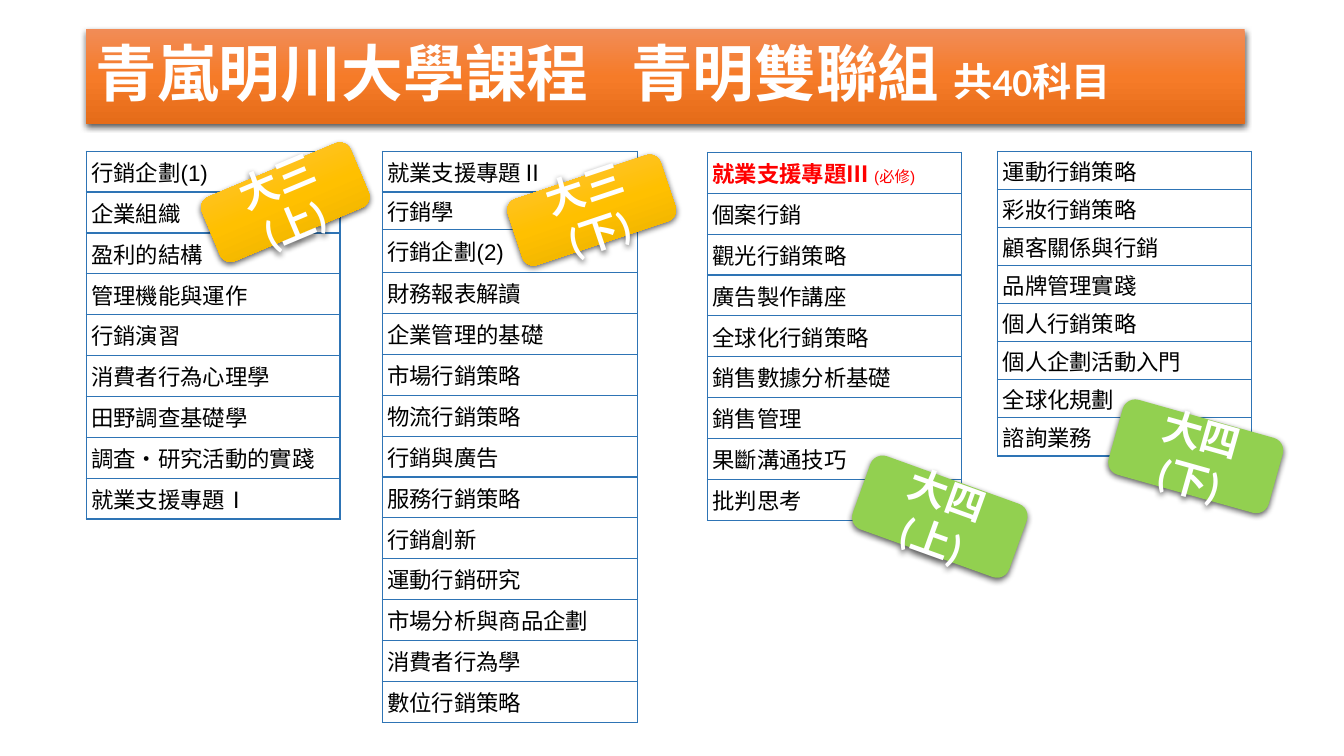
from copy import deepcopy
from dataclasses import dataclass

from lxml import etree
from pptx import Presentation
from pptx.dml import color
from pptx.enum import shapes, text
from pptx.oxml import ns
from pptx import util as u


@dataclass(frozen=True)
class Theme:
    heading_font: str = "Calibri"
    body_font: str = "Arial"
    orange: tuple = ("F18C57", "F67B28", "E56C19")
    gold: tuple = ("FFC64B", "FFC000", "E3AB00")
    green: tuple = ("92D050",)
    border: str = "2E74B5"
    black: str = "000000"
    white: str = "FFFFFF"
    red: str = "FF0000"
    title_size: int = 44
    subtitle_size: int = 28
    badge_size: int = 28
    course_size: int = 16
    note_size: int = 11


THEME = Theme()
ROW_HEIGHT = 1.03
REQUIRED_COURSE = "就業支援專題Ⅲ "
REQUIRED_NOTE = "(必修)"

COURSE_TABLES = [
    (2.17, 3.81, 6.4, [ROW_HEIGHT] * 9, [
        "行銷企劃(1)", "企業組織", "盈利的結構", "管理機能與運作", "行銷演習",
        "消費者行為心理學", "田野調查基礎學", "調査・研究活動的實踐", "就業支援專題Ⅰ"]),
    (9.63, 3.81, 6.43, [ROW_HEIGHT, 0.94, 1.09] + [ROW_HEIGHT] * 11, [
        "就業支援專題Ⅱ", "行銷學", "行銷企劃(2)", "財務報表解讀", "企業管理的基礎",
        "市場行銷策略", "物流行銷策略", "行銷與廣告", "服務行銷策略", "行銷創新",
        "運動行銷研究", "市場分析與商品企劃", "消費者行為學", "數位行銷策略"]),
    (17.83, 3.84, 6.4, [ROW_HEIGHT] * 9, [
        REQUIRED_COURSE, "個案行銷", "觀光行銷策略", "廣告製作講座", "全球化行銷策略",
        "銷售數據分析基礎", "銷售管理", "果斷溝通技巧", "批判思考"]),
    (25.14, 3.81, 6.4, [0.96] * 8, [
        "運動行銷策略", "彩妝行銷策略", "顧客關係與行銷", "品牌管理實踐",
        "個人行銷策略", "個人企劃活動入門", "全球化規劃", "諮詢業務"]),
]

SEMESTER_BADGES = [
    ("大三(上)", (5.16, 4.22, 4.06, 1.75), 337.2, THEME.gold),
    ("大三(下)", (12.88, 4.42, 4.06, 1.75), 341.5, THEME.gold),
    ("大四(上)", (21.59, 12.04, 4.19, 1.96), 19.8, THEME.green),
    ("大四(下)", (28.04, 10.52, 4.19, 1.96), 15.7, THEME.green),
]


def rgb(value):
    return color.RGBColor.from_string(value)


def add_xml(parent, tag, **attributes):
    return etree.SubElement(parent, ns.qn(tag), attributes)


def format_run(run, size, font, fill, bold=False):
    run.font.size = u.Pt(size)
    run.font.name = font
    run.font.color.rgb = rgb(fill)
    run.font.bold = bold


def fill_shape(shape, colours):
    if len(colours) == 1:
        shape.fill.solid()
        shape.fill.fore_color.rgb = rgb(colours[0])
        return
    shape.fill.gradient()
    shape.fill.gradient_angle = 270
    stops = shape._element.spPr.find(".//" + ns.qn("a:gsLst"))
    stops.insert(1, deepcopy(stops[0]))
    for index, (stop, colour) in enumerate(zip(shape.fill.gradient_stops, colours)):
        stop.position = index / 2
        stop.color.rgb = rgb(colour)


def add_shadow(shape):
    shape.shadow.inherit = False
    effects = shape._element.spPr.find(ns.qn("a:effectLst"))
    shadow = add_xml(effects, "a:outerShdw", blurRad=str(u.Pt(4.5)),
                     dist=str(u.Pt(1.5)), dir="5400000", algn="ctr", rotWithShape="0")
    tint = add_xml(shadow, "a:srgbClr", val=THEME.black)
    add_xml(tint, "a:alpha", val="63000")


def add_panel(slide, kind, box, colours, label, alignment):
    shape = slide.shapes.add_shape(kind, *map(u.Cm, box))
    fill_shape(shape, colours)
    shape.line.fill.background()
    add_shadow(shape)
    frame = shape.text_frame
    frame.text = label
    frame.word_wrap = True
    frame.vertical_anchor = text.MSO_ANCHOR.MIDDLE
    frame.paragraphs[0].alignment = alignment
    return shape


def add_title(slide):
    banner = add_panel(slide, shapes.MSO_SHAPE.RECTANGLE, (2.16, 0.74, 29.21, 2.39),
                       THEME.orange, "青嵐明川大學課程\t青明雙聯組 ", text.PP_ALIGN.LEFT)
    paragraph = banner.text_frame.paragraphs[0]
    paragraph.line_spacing = 0.9
    tabs = add_xml(paragraph._p.get_or_add_pPr(), "a:tabLst")
    add_xml(tabs, "a:tab", pos=str(u.Cm(13.5)), algn="l")
    paragraph.add_run().text = "共40科目"
    for run, size in zip(paragraph.runs, (THEME.title_size, THEME.subtitle_size)):
        format_run(run, size, THEME.heading_font, THEME.white, True)


def add_badge(slide, label, box, rotation, colours):
    badge = add_panel(slide, shapes.MSO_SHAPE.ROUNDED_RECTANGLE, box, colours,
                      label, text.PP_ALIGN.CENTER)
    badge.rotation = rotation
    format_run(badge.text_frame.paragraphs[0].runs[0], THEME.badge_size,
               THEME.heading_font, THEME.white, True)


def add_borders(cell):
    properties = cell._tc.get_or_add_tcPr()
    for position, side in enumerate(("a:lnL", "a:lnR", "a:lnT", "a:lnB")):
        line = add_xml(properties, side, w=str(u.Pt(1)))
        add_xml(add_xml(line, "a:solidFill"), "a:srgbClr", val=THEME.border)
        properties.insert(position, line)


def fill_course_cell(cell, course):
    cell.fill.background()
    add_borders(cell)
    cell.vertical_anchor = text.MSO_ANCHOR.MIDDLE
    cell.margin_left = u.Cm(0.13)
    cell.margin_right = cell.margin_top = cell.margin_bottom = 0
    paragraph = cell.text_frame.paragraphs[0]
    paragraph.text = course
    required = course == REQUIRED_COURSE
    format_run(paragraph.runs[0], THEME.course_size, THEME.body_font,
               THEME.red if required else THEME.black, required)
    if required:
        note = paragraph.add_run()
        note.text = REQUIRED_NOTE
        format_run(note, THEME.note_size, THEME.body_font, THEME.red)


def add_course_table(slide, left, top, width, heights, courses):
    box = map(u.Cm, (left, top, width, sum(heights)))
    table = slide.shapes.add_table(len(courses), 1, *box).table
    table.first_row = table.horz_banding = False
    for row, height, course in zip(table.rows, heights, courses):
        row.height = u.Cm(height)
        fill_course_cell(row.cells[0], course)


def main():
    presentation = Presentation()
    presentation.slide_width = u.Cm(33.87)
    presentation.slide_height = u.Cm(19.05)
    slide = presentation.slides.add_slide(presentation.slide_layouts[6])
    add_title(slide)
    for course_table in COURSE_TABLES:
        add_course_table(slide, *course_table)
    for badge in SEMESTER_BADGES:
        add_badge(slide, *badge)
    presentation.save("out.pptx")


if __name__ == "__main__":
    main()
